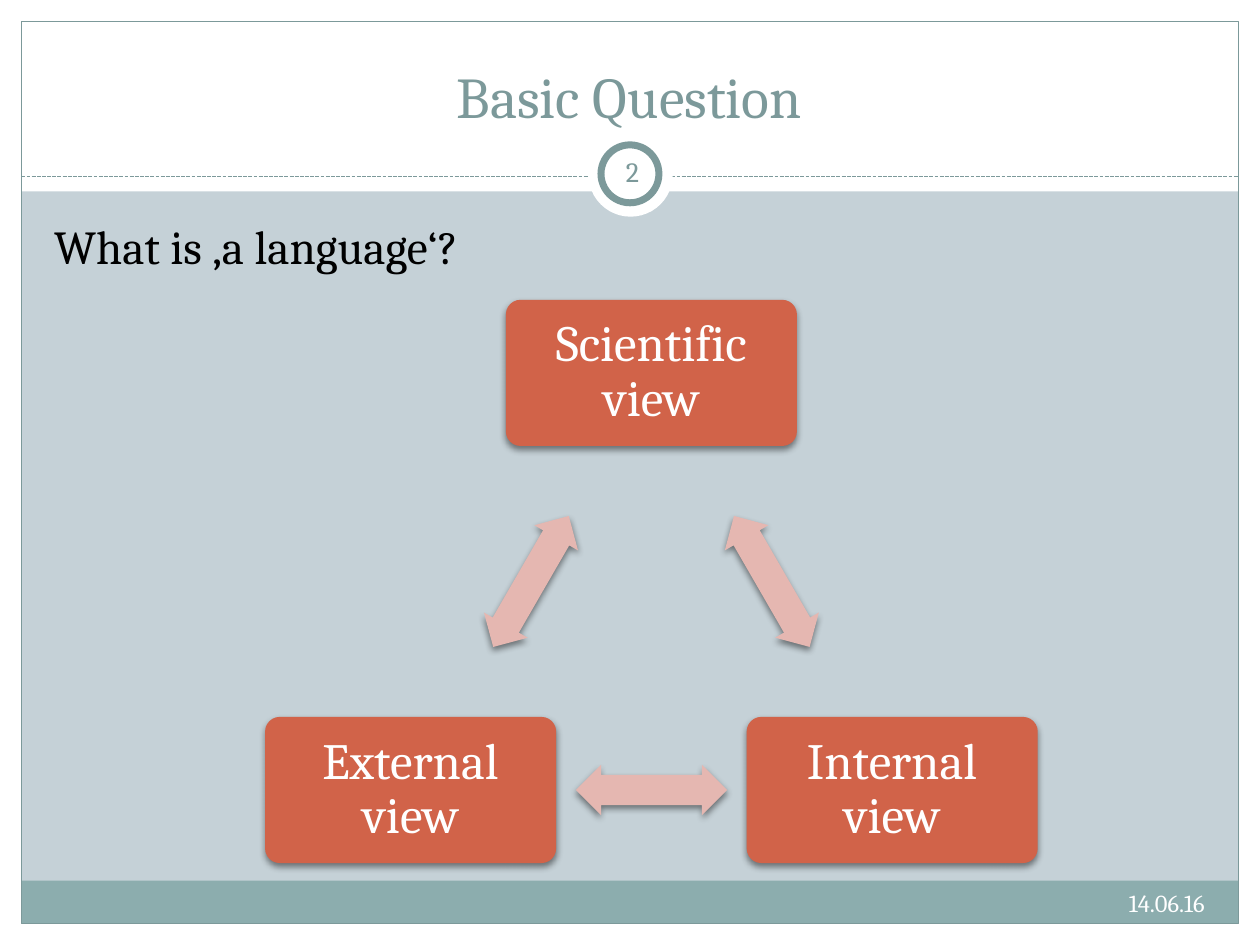
from math import cos, radians, sin

from lxml.etree import SubElement
from pptx import Presentation
from pptx.dml.color import RGBColor
from pptx.enum.dml import MSO_LINE
from pptx.enum.shapes import MSO_CONNECTOR, MSO_SHAPE
from pptx.enum.text import MSO_ANCHOR, MSO_AUTO_SIZE, PP_ALIGN
from pptx.oxml.ns import qn
from pptx.util import Inches, Pt

FONT = "Cambria"
WHITE, TEAL, BAND = "FFFFFF", "7C999A", "8CADAE"
BACKGROUND, NODE, ARROW = "C5D1D7", "D16349", "E5B7B1"


def rgb(color):
    return RGBColor.from_string(color)


def place(sp, box):
    sp.left, sp.top, sp.width, sp.height = [Inches(v) for v in box]


def write(sp, text, size, color, align=PP_ALIGN.LEFT, anchor=MSO_ANCHOR.TOP, inset=None):
    tf = sp.text_frame
    tf.word_wrap = True
    tf.auto_size = MSO_AUTO_SIZE.NONE
    tf.vertical_anchor = anchor
    if inset is not None:
        tf.margin_left = tf.margin_right = tf.margin_top = tf.margin_bottom = Inches(inset)
    p = tf.paragraphs[0]
    p.alignment = align
    p.space_before = Pt(0)
    r = p.add_run()
    r.text = text
    r.font.name, r.font.size, r.font.color.rgb = FONT, Pt(size), rgb(color)
    return p


def add_shape(shapes, kind, box, fill=None, line=None, width=0.75):
    sp = shapes.add_shape(kind, *[Inches(v) for v in box])
    sp.shadow.inherit = False
    if fill:
        sp.fill.solid()
        sp.fill.fore_color.rgb = rgb(fill)
    else:
        sp.fill.background()
    if line:
        sp.line.color.rgb = rgb(line)
        sp.line.width = Pt(width)
    else:
        sp.line.fill.background()
    return sp


def add_shadow(sp):
    effects = sp.element.spPr.find(qn("a:effectLst"))
    shadow = SubElement(effects, qn("a:outerShdw"), blurRad=str(Pt(4)), dist=str(Pt(2)),
                        dir="5400000", algn="ctr", rotWithShape="0")
    color = SubElement(shadow, qn("a:srgbClr"), val="000000")
    SubElement(color, qn("a:alpha"), val="45000")


def add_frame(s, width, height, margin=0.17):
    # White margins and header
    for box in ((0, height - margin, width, margin), (0, 0, width, 1.52),
                (0, 0, margin, height), (width - margin, 0, margin, height)):
        add_shape(s.shapes, MSO_SHAPE.RECTANGLE, box, WHITE)

    # Footer band and border
    inner = width - 2 * margin
    add_shape(s.shapes, MSO_SHAPE.RECTANGLE, (margin, 6.99, inner, 0.34), BAND)
    add_shape(s.shapes, MSO_SHAPE.RECTANGLE,
              (margin, margin, inner, height - 2 * margin), line=TEAL)

    # Dashed header rule
    rule = s.shapes.add_connector(MSO_CONNECTOR.STRAIGHT, Inches(margin), Inches(1.4),
                                  Inches(width - margin), Inches(1.4))
    rule.line.color.rgb = rgb(TEAL)
    rule.line.width = Pt(0.75)
    rule.line.dash_style = MSO_LINE.SQUARE_DOT
    SubElement(rule.element.spPr, qn("a:effectLst"))

    # Ring around the slide number
    add_shape(s.shapes, MSO_SHAPE.OVAL, (4.67, 1.05, 0.67, 0.67), WHITE)
    add_shape(s.shapes, MSO_SHAPE.OVAL, (4.77, 1.15, 0.46, 0.46), WHITE, TEAL, 4)


def add_title(s, box):
    sp = s.shapes.title
    place(sp, box)
    write(sp, "Basic Question", 33, TEAL, PP_ALIGN.CENTER, MSO_ANCHOR.BOTTOM)
    sp.element.getparent().append(sp.element)  # in front of the header panel


def add_body(s, box):
    sp = s.placeholders[1]
    place(sp, box)
    p = write(sp, "What is ‚a language‘?", 27, "000000")
    pPr = p._p.get_or_add_pPr()
    pPr.set("marL", "0")
    pPr.set("indent", "0")
    SubElement(pPr, qn("a:buNone"))
    sp.element.getparent().append(sp.element)


def add_cycle(s, box, labels, node_w=2.31, node_h=1.16, arrow_w=1.2, arrow_h=0.4):
    left, top, width, height = box
    step = 360 / len(labels)
    radius = (height - node_h) / (1 + cos(radians(step / 2)))
    cx, cy = left + width / 2, top + node_h / 2 + radius
    shapes = s.shapes.add_group_shape().shapes

    def centered(angle, distance, w, h):
        x = cx + distance * cos(radians(angle))
        y = cy + distance * sin(radians(angle))
        return x - w / 2, y - h / 2, w, h

    for i, label in enumerate(labels):
        # Node on the circle
        angle = -90 + i * step
        node = add_shape(shapes, MSO_SHAPE.ROUNDED_RECTANGLE,
                         centered(angle, radius, node_w, node_h), NODE)
        node.adjustments[0] = 0.1
        add_shadow(node)
        p = write(node, label, 29, WHITE, PP_ALIGN.CENTER, MSO_ANCHOR.MIDDLE, 0.12)
        p.line_spacing = 0.9

        # Arrow halfway to the next node
        middle = angle + step / 2
        arrow = add_shape(shapes, MSO_SHAPE.LEFT_RIGHT_ARROW,
                          centered(middle, radius * cos(radians(step / 2)), arrow_w, arrow_h),
                          ARROW)
        arrow.adjustments[0], arrow.adjustments[1] = 0.6, 0.5
        arrow.rotation = middle + 90
        add_shadow(arrow)


def add_label(s, box, text, size, color, align, anchor, inset=None):
    sp = s.shapes.add_textbox(*[Inches(v) for v in box])
    write(sp, text, size, color, align, anchor, inset)


def main():
    prs = Presentation()
    prs.slide_width, prs.slide_height = Inches(10), Inches(7.5)
    s = prs.slides.add_slide(prs.slide_layouts[1])
    s.background.fill.solid()
    s.background.fill.fore_color.rgb = rgb(BACKGROUND)

    add_frame(s, 10, 7.5)
    add_title(s, (0.33, 0.25, 9.33, 0.83))
    add_body(s, (0.33, 1.67, 9.3, 5))
    add_cycle(s, (2.11, 2.38, 6.12, 4.47),
              ("Scientific view", "Internal view", "External view"))

    # Date and slide number
    add_label(s, (6.33, 7, 3.33, 0.4), "14.06.16", 14, WHITE, PP_ALIGN.RIGHT, MSO_ANCHOR.TOP)
    add_label(s, (4.77, 1.12, 0.5, 0.48), "2", 16, TEAL,
              PP_ALIGN.CENTER, MSO_ANCHOR.MIDDLE, 0.05)
    prs.save("out.pptx")


if __name__ == "__main__":
    main()
